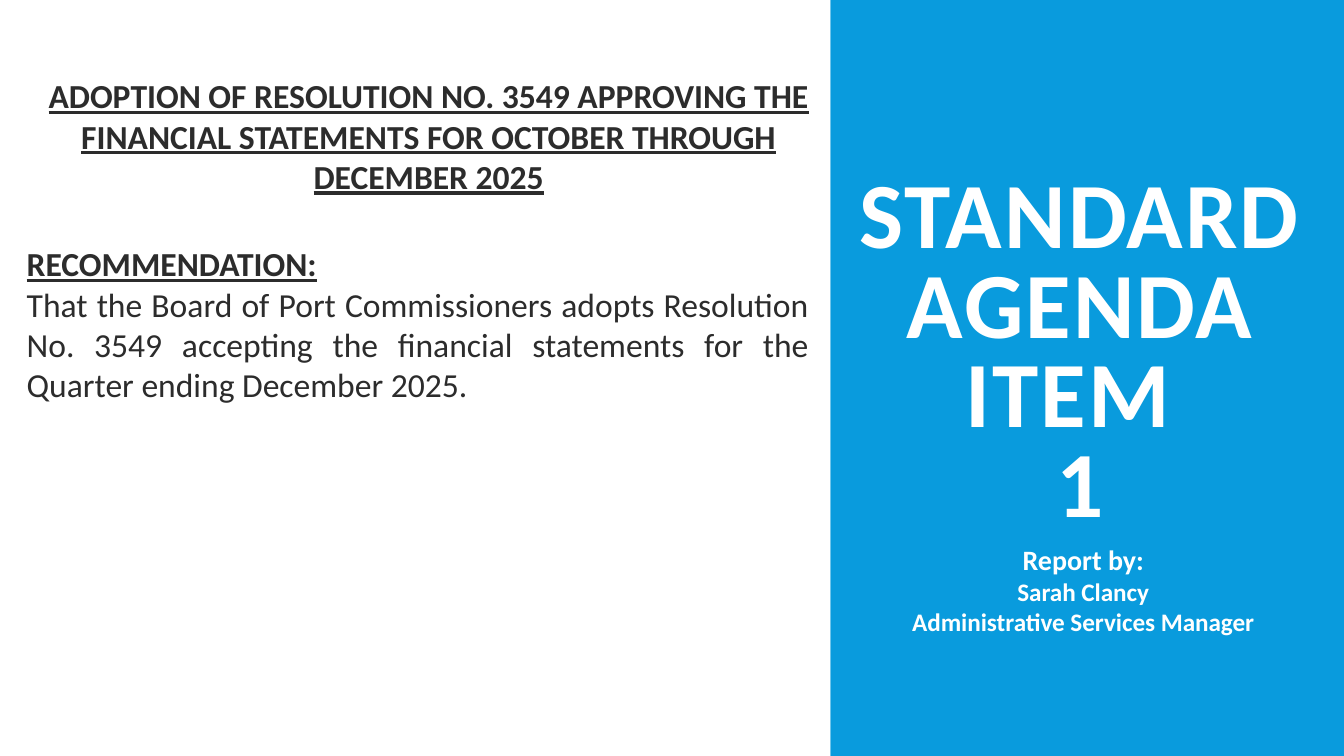
from pptx import Presentation
from pptx.dml.color import RGBColor
from pptx.enum.shapes import MSO_SHAPE
from pptx.enum.text import MSO_ANCHOR, MSO_AUTO_SIZE, PP_ALIGN
from pptx.util import Inches, Pt

BLUE = RGBColor(0x09, 0x9B, 0xDD)
WHITE = RGBColor(0xFF, 0xFF, 0xFF)
DARK = RGBColor(0x2C, 0x2C, 0x2C)

WIDTH = 10
HEIGHT = WIDTH * 9 / 16
SPLIT = 6.18

HEADING = {"size": Pt(18), "bold": True, "underline": True}
BODY = {"size": Pt(18), "bold": False, "underline": False}
TITLE = {"size": Pt(50), "bold": True}
LABEL = {"size": Pt(15), "bold": True}
PRESENTER = {"size": Pt(13.5), "bold": True}


class AgendaSlide:
    font_name = "Calibri"

    def __init__(self, slide):
        self.slide = slide
        background = slide.background.fill
        background.solid()
        background.fore_color.rgb = BLUE

    def panel(self, left, width, color):
        shape = self.slide.shapes.add_shape(
            MSO_SHAPE.RECTANGLE, Inches(left), 0, Inches(width), Inches(HEIGHT))
        shape.shadow.inherit = False
        shape.fill.solid()
        shape.fill.fore_color.rgb = color
        shape.line.fill.background()

    def format_paragraph(self, paragraph, text, style, color, alignment):
        paragraph.text = text
        paragraph.alignment = alignment
        for run in paragraph.runs:
            for name, value in {"name": self.font_name, **style}.items():
                setattr(run.font, name, value)
            run.font.color.rgb = color

    def title(self, left, top, width, height, text):
        shape = self.slide.shapes.title
        box = {"left": left, "top": top, "width": width, "height": height}
        for name, value in box.items():
            setattr(shape, name, Inches(value))
        frame = shape.text_frame
        frame.word_wrap = True
        frame.auto_size = MSO_AUTO_SIZE.NONE
        frame.vertical_anchor = MSO_ANCHOR.MIDDLE
        paragraph = frame.paragraphs[0]
        self.format_paragraph(paragraph, text, TITLE, WHITE, PP_ALIGN.CENTER)
        paragraph.line_spacing = 0.8
        for run in paragraph.runs:
            run.font._element.set("spc", "110")
        # Bring the title in front of the panels.
        shape.element.getparent().append(shape.element)

    def text(self, left, top, width, height, color, lines):
        """Add a text box from (text, style, alignment) lines."""
        shape = self.slide.shapes.add_textbox(
            Inches(left), Inches(top), Inches(width), Inches(height))
        frame = shape.text_frame
        frame.word_wrap = True
        frame.auto_size = MSO_AUTO_SIZE.SHAPE_TO_FIT_TEXT
        for index, (text, style, alignment) in enumerate(lines):
            paragraph = frame.add_paragraph() if index else frame.paragraphs[0]
            self.format_paragraph(paragraph, text, style, color, alignment)


def main():
    presentation = Presentation()
    presentation.slide_width = Inches(WIDTH)
    presentation.slide_height = Inches(HEIGHT)
    title_only = presentation.slide_layouts.get_by_name("Title Only")
    agenda = AgendaSlide(presentation.slides.add_slide(title_only))

    agenda.panel(0, SPLIT, WHITE)
    agenda.panel(SPLIT, WIDTH - SPLIT, BLUE)
    agenda.title(6.25, 1.15, 3.58, 3, "STANDARD AGENDA ITEM \v1")
    agenda.text(0.1, 0.51, 6.18, 1.01, DARK, [
        ("ADOPTION OF RESOLUTION NO. 3549 APPROVING THE FINANCIAL STATEMENTS "
         "FOR OCTOBER THROUGH DECEMBER 2025", HEADING, PP_ALIGN.CENTER),
    ])
    agenda.text(0.1, 1.76, 6.02, 1.31, DARK, [
        ("RECOMMENDATION:", HEADING, PP_ALIGN.LEFT),
        ("That the Board of Port Commissioners adopts Resolution No. 3549 "
         "accepting the financial statements for the Quarter ending "
         "December 2025.", BODY, PP_ALIGN.JUSTIFY),
    ])
    agenda.text(6.15, 3.99, 3.82, 0.81, WHITE, [
        ("Report by:", LABEL, PP_ALIGN.CENTER),
        ("Sarah Clancy", PRESENTER, PP_ALIGN.CENTER),
        ("Administrative Services Manager", PRESENTER, PP_ALIGN.CENTER),
    ])
    presentation.save("out.pptx")


if __name__ == "__main__":
    main()
